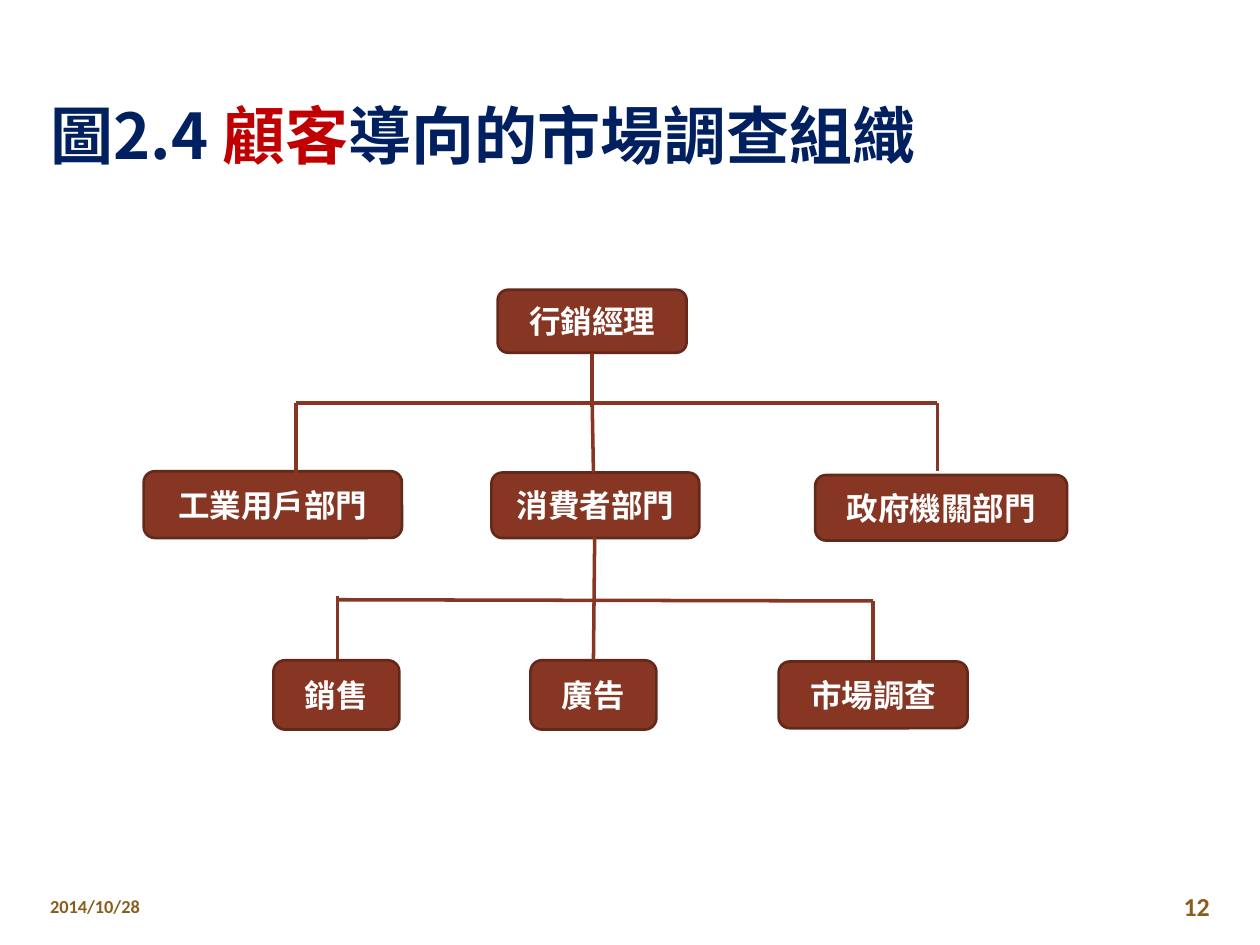
from lxml import etree
from pptx import Presentation
from pptx.dml.color import RGBColor
from pptx.enum.shapes import MSO_CONNECTOR, MSO_SHAPE
from pptx.enum.text import MSO_ANCHOR, MSO_AUTO_SIZE, PP_ALIGN
from pptx.oxml.ns import qn
from pptx.util import Inches, Pt

ROUNDED = MSO_SHAPE.ROUNDED_RECTANGLE
STRAIGHT = MSO_CONNECTOR.STRAIGHT
MIDDLE, BOTTOM = MSO_ANCHOR.MIDDLE, MSO_ANCHOR.BOTTOM
LEFT, CENTER, RIGHT = PP_ALIGN.LEFT, PP_ALIGN.CENTER, PP_ALIGN.RIGHT
NO_AUTOFIT = MSO_AUTO_SIZE.NONE
TITLE_ONLY = 5


def color(hex_code):
    return RGBColor.from_string(hex_code)


class ChartSlide:
    """Holds the style and the slide that the organisation chart is drawn on."""

    CJK_FONT, LATIN_FONT = "Noto Sans CJK SC", "Calibri"
    NAVY, RED, WHITE = "002060", "C00000", "FFFFFF"
    BROWN, DARK_BROWN, GOLD = "873624", "64281B", "895D1D"

    def __init__(self, deck):
        self.slide = deck.slides.add_slide(deck.slide_layouts[TITLE_ONLY])
        self.shapes = self.slide.shapes

    def format_span(self, span, size, font_name, hex_code):
        font = span.font
        font.name, font.size, font.bold = font_name, Pt(size), True
        font.color.rgb = color(hex_code)
        east_asian = etree.SubElement(span._r.get_or_add_rPr(), qn("a:ea"))
        east_asian.set("typeface", font_name)

    def title(self, spans, left, top, width, height):
        title = self.shapes.title
        title.left, title.top = Inches(left), Inches(top)
        title.width, title.height = Inches(width), Inches(height)
        frame = title.text_frame
        frame.auto_size = NO_AUTOFIT
        frame.word_wrap = True
        frame.vertical_anchor = BOTTOM
        para = frame.paragraphs[0]
        para.alignment = LEFT
        para.space_before = Pt(4)
        for text, hex_code in spans:
            span = para.add_run()
            span.text = text
            self.format_span(span, 36, self.CJK_FONT, hex_code)

    def label(self, box, text, align, size, font_name, hex_code):
        frame = box.text_frame
        frame.text = text
        frame.word_wrap = True
        frame.vertical_anchor = MIDDLE
        para = frame.paragraphs[0]
        para.alignment = align
        self.format_span(para.runs[0], size, font_name, hex_code)

    def footer(self, text, left, width, align, size):
        box = self.shapes.add_textbox(
            Inches(left), Inches(7.03), Inches(width), Inches(0.32))
        self.label(box, text, align, size, self.LATIN_FONT, self.GOLD)

    def unit(self, text, left, top, width, height):
        box = self.shapes.add_shape(
            ROUNDED, Inches(left), Inches(top), Inches(width), Inches(height))
        box.shadow.inherit = False
        box.fill.solid()
        box.fill.fore_color.rgb = color(self.BROWN)
        box.line.color.rgb = color(self.DARK_BROWN)
        box.line.width = Pt(1.5)
        self.label(box, text, CENTER, 18, self.CJK_FONT, self.WHITE)

    def line(self, *ends):
        """Draw a line; ends are start x, start y, end x, end y in inches."""
        line = self.shapes.add_connector(STRAIGHT, *map(Inches, ends))
        line.line.color.rgb = color(self.BROWN)
        line.line.width = Pt(2)
        etree.SubElement(line._element.spPr, qn("a:effectLst"))


UNITS = [
    ("行銷經理", 3.95, 2.3, 1.5, 0.5),
    ("工業用戶部門", 1.14, 3.74, 2.05, 0.53),
    ("消費者部門", 3.9, 3.75, 1.65, 0.52),
    ("政府機關部門", 6.47, 3.77, 2, 0.52),
    ("銷售", 2.17, 5.24, 1, 0.55),
    ("廣告", 4.21, 5.24, 1, 0.55),
    ("市場調查", 6.18, 5.25, 1.5, 0.53),
]

LINES = [
    # manager to departments
    (4.7, 2.8, 4.7, 3.23),
    (2.35, 3.2, 7.44, 3.2),
    (2.35, 3.2, 2.35, 3.75),
    (4.7, 3.2, 4.71, 3.75),
    (7.44, 3.2, 7.44, 3.74),
    # consumer department to its teams
    (4.72, 4.26, 4.71, 5.24),
    (2.68, 4.76, 6.93, 4.77),
    (2.68, 4.73, 2.68, 5.23),
    (6.93, 4.77, 6.93, 5.24),
]


def main():
    deck = Presentation()
    deck.slide_width, deck.slide_height = Inches(10), Inches(7.5)
    page = ChartSlide(deck)
    page.title(
        [("圖2.4 ", page.NAVY), ("顧客", page.RED),
         ("導向的市場調查組織", page.NAVY)],
        0.3, 0.25, 9.4, 1.17)
    for unit in UNITS:
        page.unit(*unit)
    for ends in LINES:
        page.line(*ends)
    page.footer("2014/10/28", 0.3, 2.33, LEFT, 10.5)
    page.footer("12", 8.74, 0.96, RIGHT, 14.8)
    deck.save("out.pptx")


if __name__ == "__main__":
    main()
